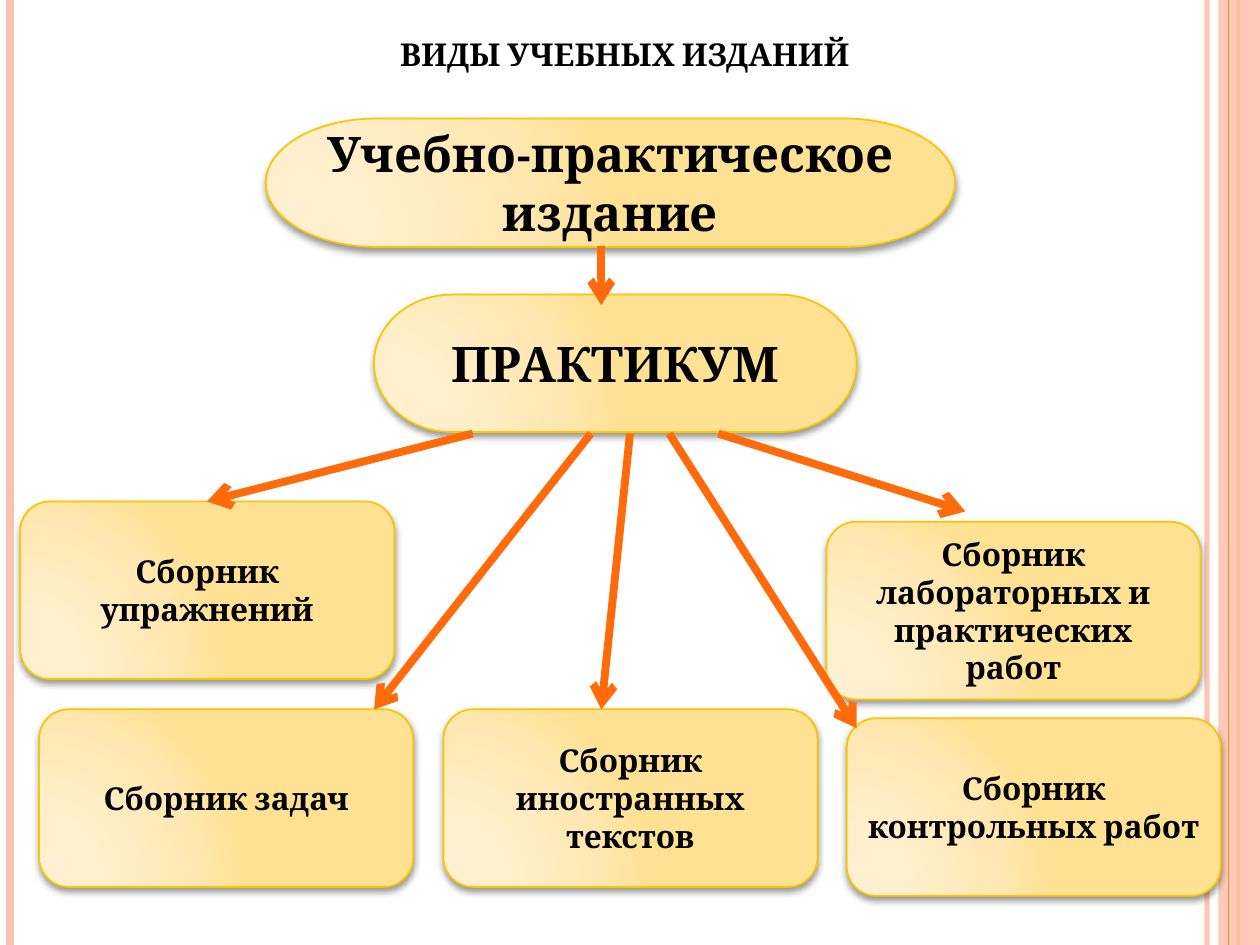
from lxml.etree import SubElement
from pptx import Presentation
from pptx.dml.color import RGBColor
from pptx.enum.shapes import MSO_CONNECTOR, MSO_SHAPE
from pptx.enum.text import MSO_ANCHOR, PP_ALIGN
from pptx.oxml import parse_xml
from pptx.oxml.ns import nsdecls, qn
from pptx.util import Cm, Pt

PEACH = RGBColor(0xFE, 0xC3, 0xAE)
ORANGE = RGBColor(0xFE, 0x86, 0x37)
ARROW = RGBColor(0xFF, 0x6B, 0x0A)
GOLD = RGBColor(0xF8, 0xC7, 0x00)
BLACK = RGBColor(0, 0, 0)
GRADIENT = [(0, RGBColor(0xFF, 0xF0, 0xD1)), (30, RGBColor(0xFF, 0xEF, 0xCC)),
            (75, RGBColor(0xFF, 0xE7, 0xB1)), (100, RGBColor(0xFF, 0xE1, 0x93))]

SLIDE_W, SLIDE_H = 25.4, 19.05
BOX_W, BOX_H = 7.54, 3.58
ROW_Y = 14.3        # top of the lower row
FORK_Y = 8.74       # bottom of the practicum shape


def set_alpha(color_parent, percent):
    clr = next(color_parent.iter(qn("a:srgbClr")))
    SubElement(clr, qn("a:alpha")).set("val", str(percent * 1000))


def add_line(s, x1, y1, x2, y2, color, width):
    line = s.shapes.add_connector(MSO_CONNECTOR.STRAIGHT, Cm(x1), Cm(y1), Cm(x2), Cm(y2))
    line.line.color.rgb = color
    line.line.width = Pt(width)
    SubElement(line._element.spPr, qn("a:effectLst"))
    return line


def add_stripe(s, x, color, width):
    return add_line(s, x, 0, x, SLIDE_H, color, width)


def add_arrow(s, x1, y1, x2, y2):
    arrow = add_line(s, x1, y1, x2, y2, ARROW, 4.5)
    SubElement(arrow.line._get_or_add_ln(), qn("a:tailEnd")).set("type", "arrow")


def add_text(tf, text, size):
    tf.word_wrap = True
    p = tf.paragraphs[0]
    p.alignment = PP_ALIGN.CENTER
    r = p.add_run()
    r.text = text
    r.font.name = "Cambria"
    r.font.size = Pt(size)
    r.font.bold = True
    r.font.color.rgb = BLACK


def add_gradient(sp):
    stops = "".join(f'<a:gs pos="{pos * 1000}"><a:srgbClr val="{color}"/></a:gs>'
                    for pos, color in GRADIENT)
    sp._element.spPr.insert(2, parse_xml(
        f'<a:gradFill {nsdecls("a")} rotWithShape="1"><a:gsLst>{stops}</a:gsLst>'
        '<a:path path="circle"><a:fillToRect l="5000" t="100000" r="120000" b="10000"/>'
        '</a:path></a:gradFill>'))


def add_shadow(sp):
    sp.shadow.inherit = False
    effects = sp._element.spPr.find(qn("a:effectLst"))
    effects.append(parse_xml(
        f'<a:outerShdw {nsdecls("a")} blurRad="{Pt(4)}" dist="{Pt(2)}" dir="5400000" '
        'rotWithShape="0"><a:srgbClr val="000000"><a:alpha val="40000"/></a:srgbClr>'
        '</a:outerShdw>'))


def add_node(s, kind, x, y, w, h, text, size):
    sp = s.shapes.add_shape(kind, Cm(x), Cm(y), Cm(w), Cm(h))
    add_gradient(sp)
    sp.line.color.rgb = GOLD
    sp.line.width = Pt(1)
    add_shadow(sp)
    sp.text_frame.vertical_anchor = MSO_ANCHOR.MIDDLE
    add_text(sp.text_frame, text, size)


def add_heading(s, *args):
    add_node(s, MSO_SHAPE.FLOWCHART_TERMINATOR, *args, 28)


def add_box(s, x, y, text):
    add_node(s, MSO_SHAPE.FLOWCHART_ALTERNATE_PROCESS, x, y, BOX_W, BOX_H, text, 18)


def add_side_stripes(s):
    set_alpha(add_stripe(s, 24.33, PEACH, 3)._element.spPr, 93)
    add_stripe(s, 0.2, PEACH, 4.5)
    add_stripe(s, 24.97, ORANGE, 1.5)
    band = s.shapes.add_shape(MSO_SHAPE.RECTANGLE, Cm(24.56), 0,
                              Cm(SLIDE_W - 24.56), Cm(SLIDE_H))
    band.fill.solid()
    band.fill.fore_color.rgb = PEACH
    set_alpha(band._element.spPr, 87)
    band.line.fill.background()
    band.shadow.inherit = False
    add_stripe(s, 24.77, ORANGE, 0.75)


def main():
    prs = Presentation()
    prs.slide_width, prs.slide_height = Cm(SLIDE_W), Cm(SLIDE_H)
    s = prs.slides.add_slide(prs.slide_layouts[6])
    add_side_stripes(s)

    # Title
    title = s.shapes.add_textbox(Cm(4.37), Cm(0.58), Cm(16.46), Cm(1.02))
    add_text(title.text_frame, "ВИДЫ УЧЕБНЫХ ИЗДАНИЙ", 18)

    # Upper levels and the boxes beneath them
    add_heading(s, 5.36, 2.39, 13.89, 2.59, "Учебно-практическое издание")
    add_heading(s, 7.54, 5.94, 9.73, 2.77, "ПРАКТИКУМ")
    for x, y, text in [
        (0.41, 10.11, "Сборник упражнений"),
        (0.79, ROW_Y, "Сборник задач"),
        (16.66, 10.52, "Сборник лабораторных и практических работ"),
        (8.94, ROW_Y, "Сборник иностранных текстов"),
        (17.07, 14.48, "Сборник контрольных работ"),
    ]:
        add_box(s, x, y, text)

    # Arrows: one between the levels, then the fan to the boxes
    add_arrow(s, 12.12, 4.95, 12.12, 6.15)
    for x1, x2, y2 in [(9.53, 4.17, 10.11), (14.48, 19.46, 10.31), (11.91, 7.54, ROW_Y),
                       (12.7, 12.12, ROW_Y), (13.49, 17.27, 14.68)]:
        add_arrow(s, x1, FORK_Y, x2, y2)

    prs.save("out.pptx")


if __name__ == "__main__":
    main()
